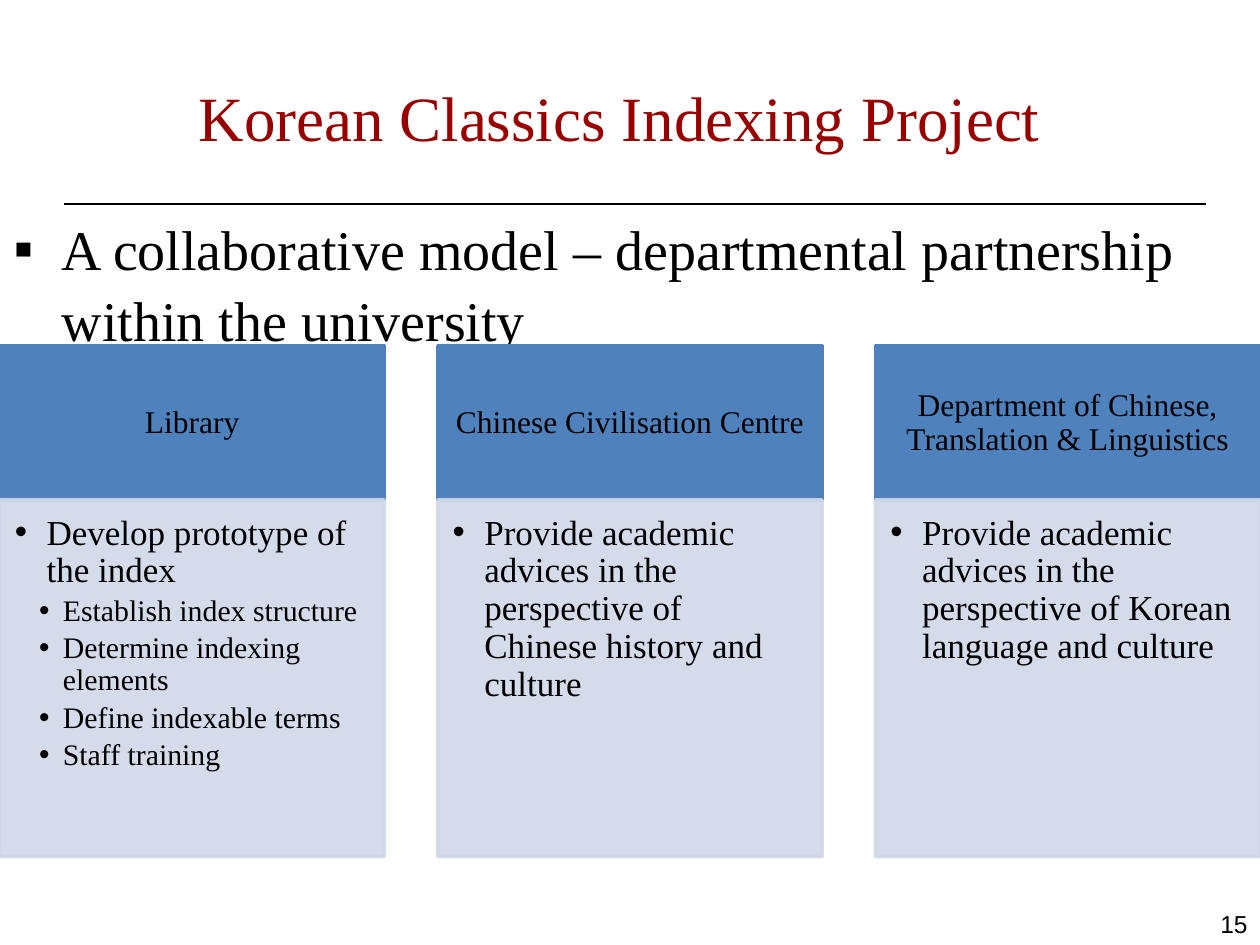
from lxml.etree import SubElement
from pptx import Presentation
from pptx.dml.color import RGBColor
from pptx.enum.shapes import MSO_CONNECTOR, MSO_SHAPE
from pptx.enum.text import MSO_ANCHOR, MSO_AUTO_SIZE, PP_ALIGN
from pptx.oxml.ns import qn
from pptx.util import Cm, Pt

HUES = {
    "title": "990000",
    "ink": "000000",
    "head": "4F81BD",
    "card": "D0D8E8",
}
SERIF = "Times New Roman"
WIDE, HIGH = 25.4, 19.05

# Each card: heading, then (level, text) items
CARDS = [
    ("Library", [
        (0, "Develop prototype of the index"),
        (1, "Establish index structure"),
        (1, "Determine indexing elements"),
        (1, "Define indexable terms"),
        (1, "Staff training"),
    ]),
    ("Chinese Civilisation Centre", [
        (0, "Provide academic advices in the perspective of Chinese history and culture"),
    ]),
    ("Department of Chinese, Translation & Linguistics", [
        (0, "Provide academic advices in the perspective of Korean language and culture"),
    ]),
]
# Per level: text size, left margin and hanging indent in cm
LEVELS = [(20, 0.64, 0.64), (17, 0.97, 0.48)]


def tint(name):
    return RGBColor.from_string(HUES[name])


def place(shape, left, top, width, height):
    shape.left, shape.top = Cm(left), Cm(top)
    shape.width, shape.height = Cm(width), Cm(height)


def write(para, text, size, hue="ink", face=SERIF):
    run = para.add_run()
    run.text = text
    font = run.font
    font.name, font.size = face, Pt(size)
    font.color.rgb = tint(hue)


def bullet(para, mark, left, hang):
    props = para._p.get_or_add_pPr()
    props.set("marL", str(Cm(left)))
    props.set("indent", str(-Cm(hang)))
    SubElement(props, qn("a:buFont"), typeface="Arial")
    SubElement(props, qn("a:buChar"), char=mark)


def space(para, line, after=0):
    para.line_spacing = line
    para.space_before = Pt(0)
    para.space_after = Pt(after)


def fade(shape, share):
    for color in shape._element.spPr.iter(qn("a:srgbClr")):
        SubElement(color, qn("a:alpha"), val=str(share * 1000))


def panel(slide, spot, hue, inset, anchor):
    box = slide.shapes.add_shape(MSO_SHAPE.RECTANGLE, *map(Cm, spot))
    box.shadow.inherit = False
    box.fill.solid()
    box.fill.fore_color.rgb = tint(hue)
    box.line.color.rgb = tint(hue)
    box.line.width = Pt(2)
    frame = box.text_frame
    frame.word_wrap = True
    frame.vertical_anchor = anchor
    (frame.margin_left, frame.margin_top,
     frame.margin_right, frame.margin_bottom) = map(Cm, inset)
    return box


def card(slide, left, width, name, items):
    # Heading
    top, tall = 6.98, 3.1
    head = panel(slide, (left, top, width, tall), "head",
                 (0.36, 0.2, 0.36, 0.2), MSO_ANCHOR.MIDDLE)
    para = head.text_frame.paragraphs[0]
    para.alignment = PP_ALIGN.CENTER
    space(para, 0.9)
    write(para, name, 18)

    # Bulleted items
    body = panel(slide, (left, top + tall, width, 7.19), "card",
                 (0.3, 0.3, 0.4, 0.43), MSO_ANCHOR.TOP)
    fade(body, 90)
    frame = body.text_frame
    for i, (level, text) in enumerate(items):
        para = frame.add_paragraph() if i else frame.paragraphs[0]
        size, edge, hang = LEVELS[level]
        para.level = level
        para.alignment = PP_ALIGN.LEFT
        bullet(para, "•", edge, hang)
        space(para, 0.9, 3)
        write(para, text, size)


def title(slide, text):
    shape = slide.shapes.title
    place(shape, 3.66, 1.4, 17.65, 1.8)
    frame = shape.text_frame
    frame.auto_size = MSO_AUTO_SIZE.NONE
    frame.word_wrap = False
    para = frame.paragraphs[0]
    para.alignment = PP_ALIGN.CENTER
    space(para, 1.06)
    write(para, text, 36, "title")


def lead(slide, text):
    shape = slide.placeholders[1]
    place(shape, 0, 4.11, WIDE, 2.8)
    frame = shape.text_frame
    frame.auto_size = MSO_AUTO_SIZE.NONE
    para = frame.paragraphs[0]
    bullet(para, "▪", 0.99, 0.97)
    space(para, 1.06, 6)
    write(para, text, 32)


def rule(slide, left, right, top):
    line = slide.shapes.add_connector(
        MSO_CONNECTOR.STRAIGHT, Cm(left), Cm(top), Cm(right), Cm(top))
    line.line.color.rgb = tint("ink")
    line.line.width = Pt(0.75)
    SubElement(line._element.spPr, qn("a:effectLst"))


def number(slide, text):
    width, height = 5.92, 0.84
    box = slide.shapes.add_textbox(
        Cm(WIDE - width), Cm(HIGH - height), Cm(width), Cm(height))
    box.text_frame.word_wrap = True
    para = box.text_frame.paragraphs[0]
    para.alignment = PP_ALIGN.RIGHT
    write(para, text, 14, face="Arial")


def main():
    deck = Presentation()
    deck.slide_width, deck.slide_height = Cm(WIDE), Cm(HIGH)
    slide = deck.slides.add_slide(deck.slide_layouts[1])

    # Title, rule and lead point
    title(slide, "Korean Classics Indexing Project")
    lead(slide, "A collaborative model – departmental partnership within the university")
    rule(slide, 1.3, 24.31, 4.11)

    # Cards spread evenly from edge to edge
    width = 7.75
    step = (WIDE - width) / (len(CARDS) - 1)
    for i, (name, items) in enumerate(CARDS):
        card(slide, i * step, width, name, items)

    number(slide, "15")
    deck.save("out.pptx")


if __name__ == "__main__":
    main()
